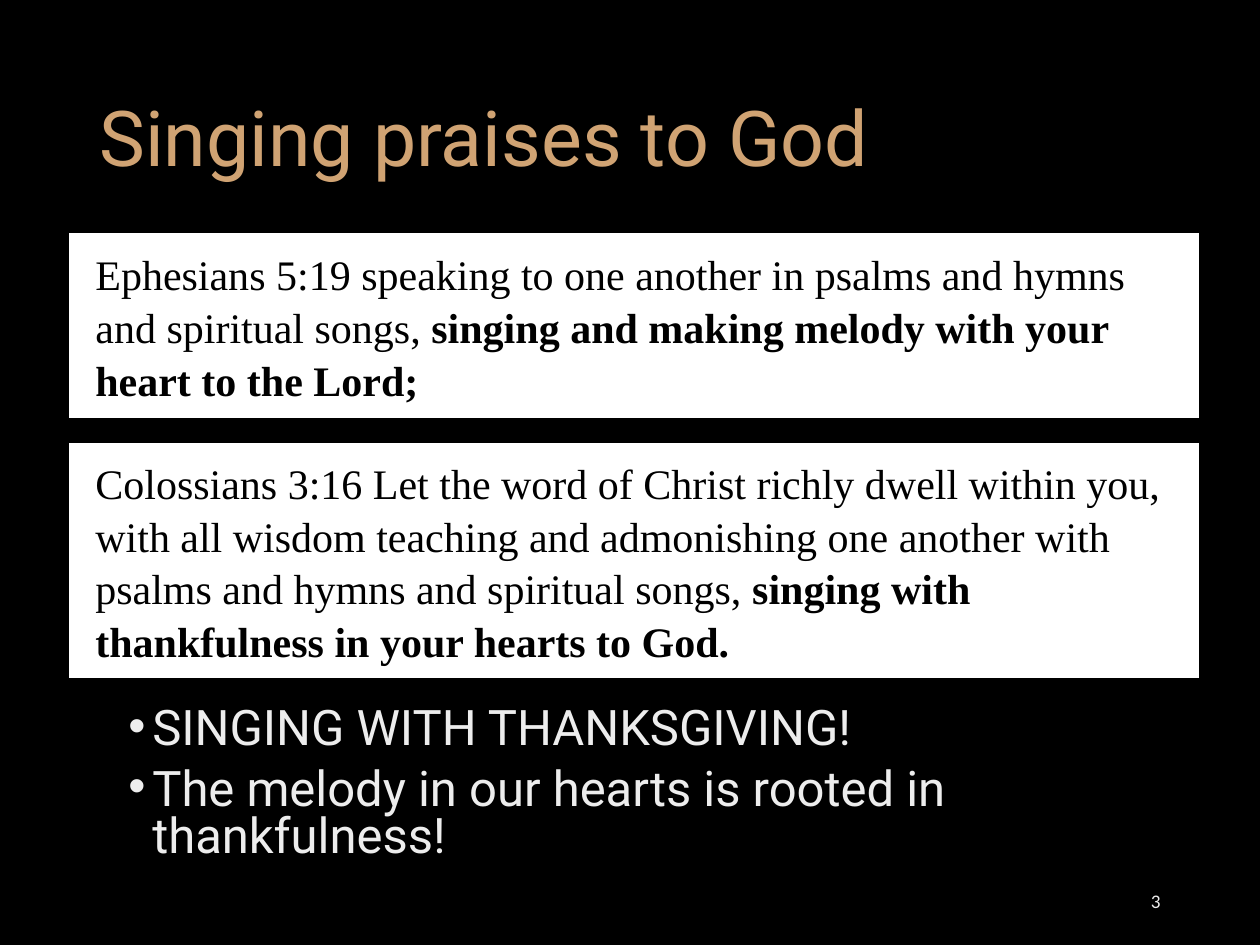
"""Build the slide about singing praises to God."""
from lxml import etree
from pptx import Presentation
from pptx.dml.color import RGBColor
from pptx.enum.shapes import MSO_SHAPE
from pptx.enum.text import MSO_ANCHOR, PP_ALIGN
from pptx.oxml.ns import qn
from pptx.util import Emu, Pt

RECTANGLE = MSO_SHAPE.RECTANGLE
MIDDLE = MSO_ANCHOR.MIDDLE
LEFT, RIGHT = PP_ALIGN.LEFT, PP_ALIGN.RIGHT
SCALE = 914400 / 126
COLOURS = {"black": "000000", "white": "FFFFFF", "gold": "D0A373", "pale": "EDEDED"}


def px(*lengths):
    return [Emu(round(length * SCALE)) for length in lengths]


def style(font, name, size, colour):
    font.name = name
    font.size = Pt(size)
    font.color.rgb = RGBColor.from_string(COLOURS[colour])


deck = Presentation()
deck.slide_width, deck.slide_height = px(1260, 945)
page = deck.slides.add_slide(deck.slide_layouts[5])
page.background.fill.solid()
page.background.fill.fore_color.rgb = RGBColor.from_string(COLOURS["black"])

title = page.shapes.title
title.left, title.top, title.width, title.height = px(87, 50, 1086, 183)
title.text_frame.text = "Singing praises to God"
title.text_frame.vertical_anchor = MIDDLE
para = title.text_frame.paragraphs[0]
para.alignment = LEFT
para.line_spacing = 0.9
style(para.runs[0].font, "Roboto", 44, "gold")

points = [
    "SINGING WITH THANKSGIVING!",
    "The melody in our hearts is rooted in thankfulness!",
]
box = page.shapes.add_textbox(*px(116, 702, 1057, 180))
box.text_frame.word_wrap = True
box.text_frame.text = "\n".join(points)
for index, para in enumerate(box.text_frame.paragraphs):
    para.line_spacing = 0.8
    para.space_before = Pt(7.5 if index else 0)
    properties = para._p.get_or_add_pPr()
    indent = px(24)[0]
    properties.set("marL", str(indent))
    properties.set("indent", str(-indent))
    etree.SubElement(properties, qn("a:buFont")).set("typeface", "Arial")
    etree.SubElement(properties, qn("a:buChar")).set("char", "•")
    style(para.runs[0].font, "Roboto", 28, "pale")

verses = [
    (231, 189,
     "Ephesians 5:19 speaking to one another in psalms and hymns and spiritual songs, ",
     "singing and making melody with your heart to the Lord;"),
    (441, 239,
     "Colossians 3:16 Let the word of Christ richly dwell within you, with all wisdom "
     "teaching and admonishing one another with psalms and hymns and spiritual songs, ",
     "singing with thankfulness in your hearts to God."),
]
for top, height, opening, emphasis in verses:
    panel = page.shapes.add_shape(RECTANGLE, *px(67, top, 1134, height))
    panel.shadow.inherit = False
    panel.fill.solid()
    panel.fill.fore_color.rgb = RGBColor.from_string(COLOURS["white"])
    panel.line.color.rgb = RGBColor.from_string(COLOURS["black"])
    panel.line.width = Pt(2.25)
    panel.text_frame.word_wrap = True
    panel.text_frame.vertical_anchor = MIDDLE
    para = panel.text_frame.paragraphs[0]
    para.alignment = LEFT
    para.line_spacing = 1.05
    para._p.get_or_add_pPr().set("marL", str(px(16)[0]))
    for words, bold in ((opening, False), (emphasis, True)):
        span = para.add_run()
        span.text = words
        style(span.font, "Times New Roman", 24, "black")
        span.font.bold = bold

number = page.shapes.add_textbox(*px(890, 876, 283, 50))
number.text_frame.word_wrap = True
number.text_frame.vertical_anchor = MIDDLE
number.text_frame.text = "3"
para = number.text_frame.paragraphs[0]
para.alignment = RIGHT
style(para.runs[0].font, "Calibri", 11, "pale")

deck.save("out.pptx")
